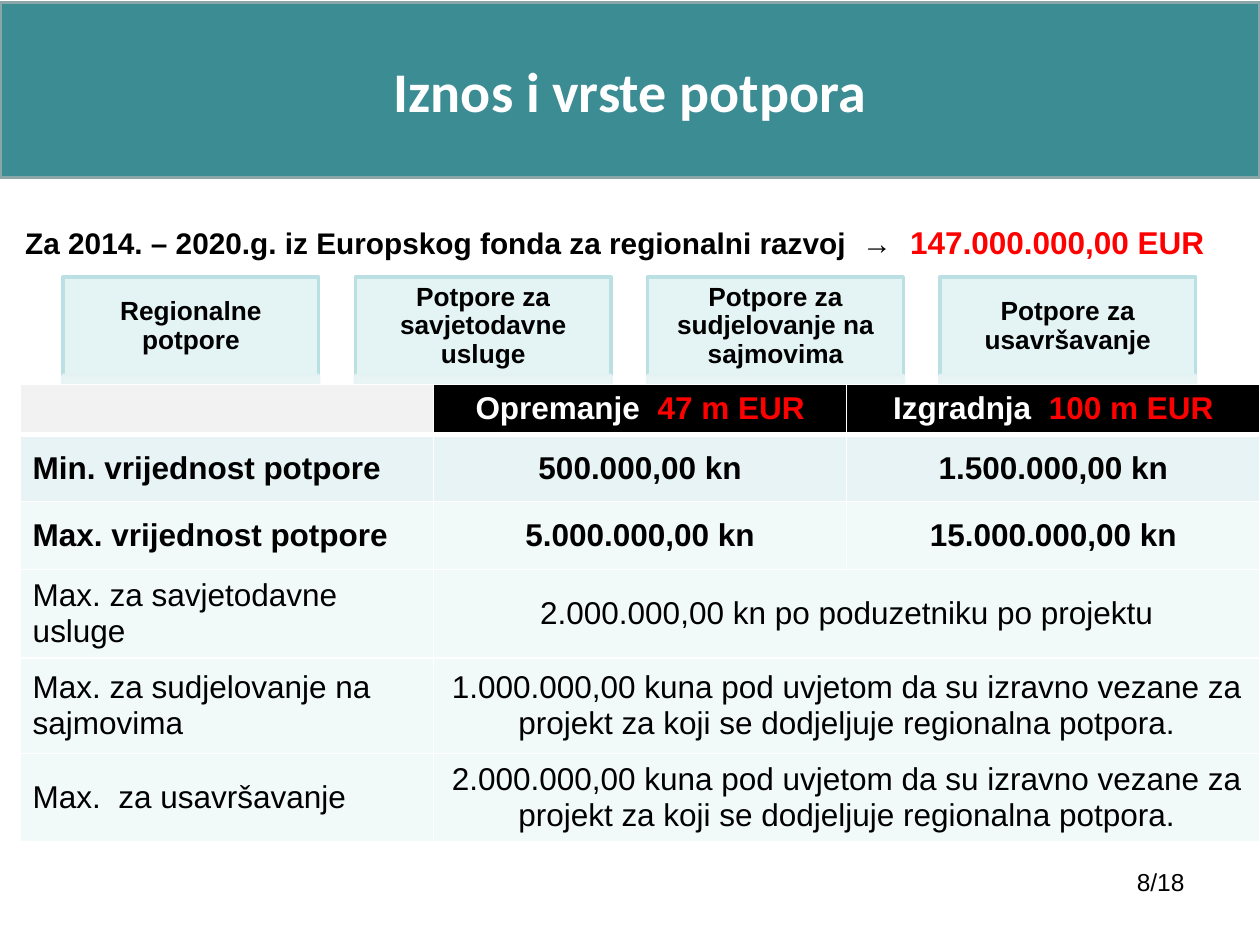
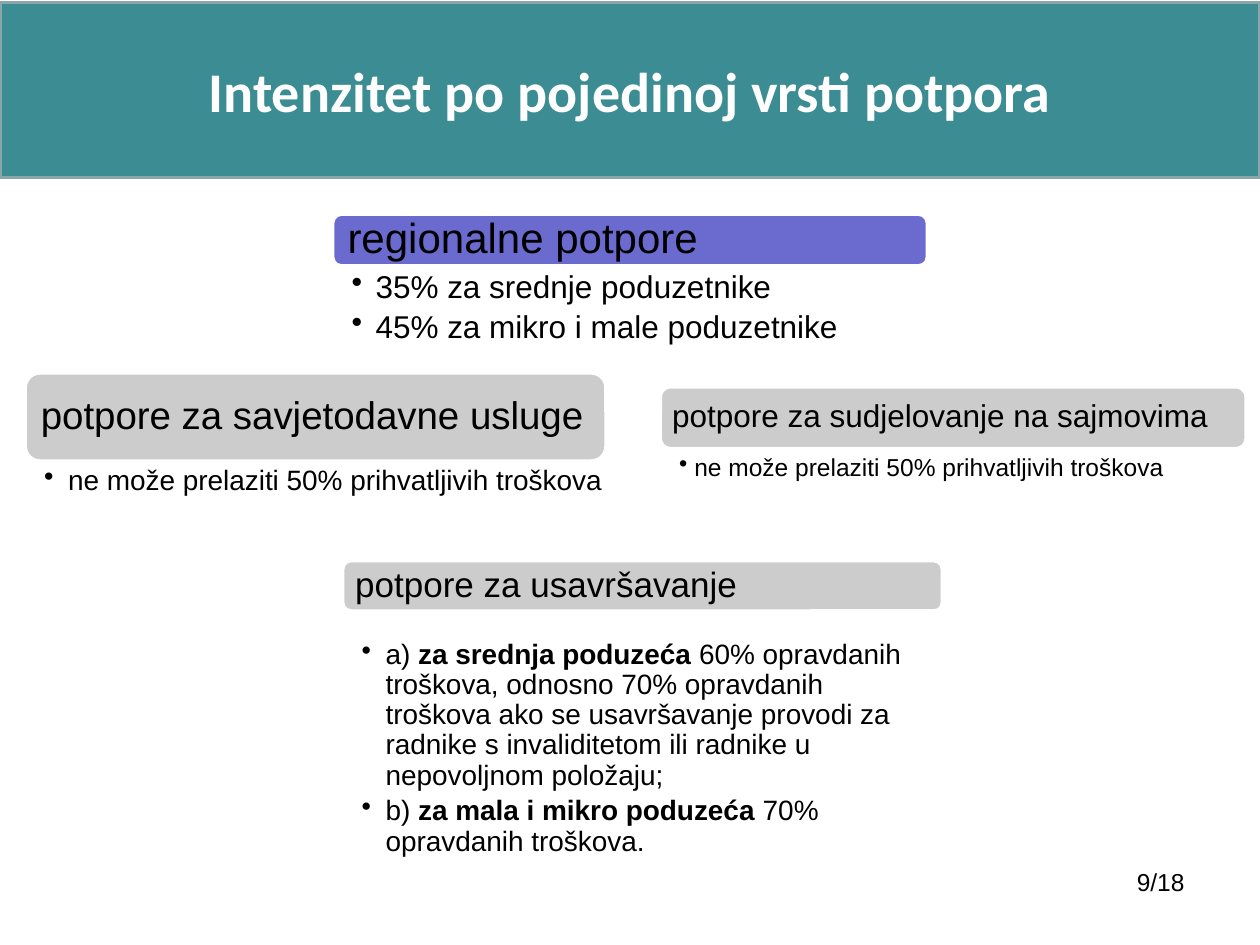
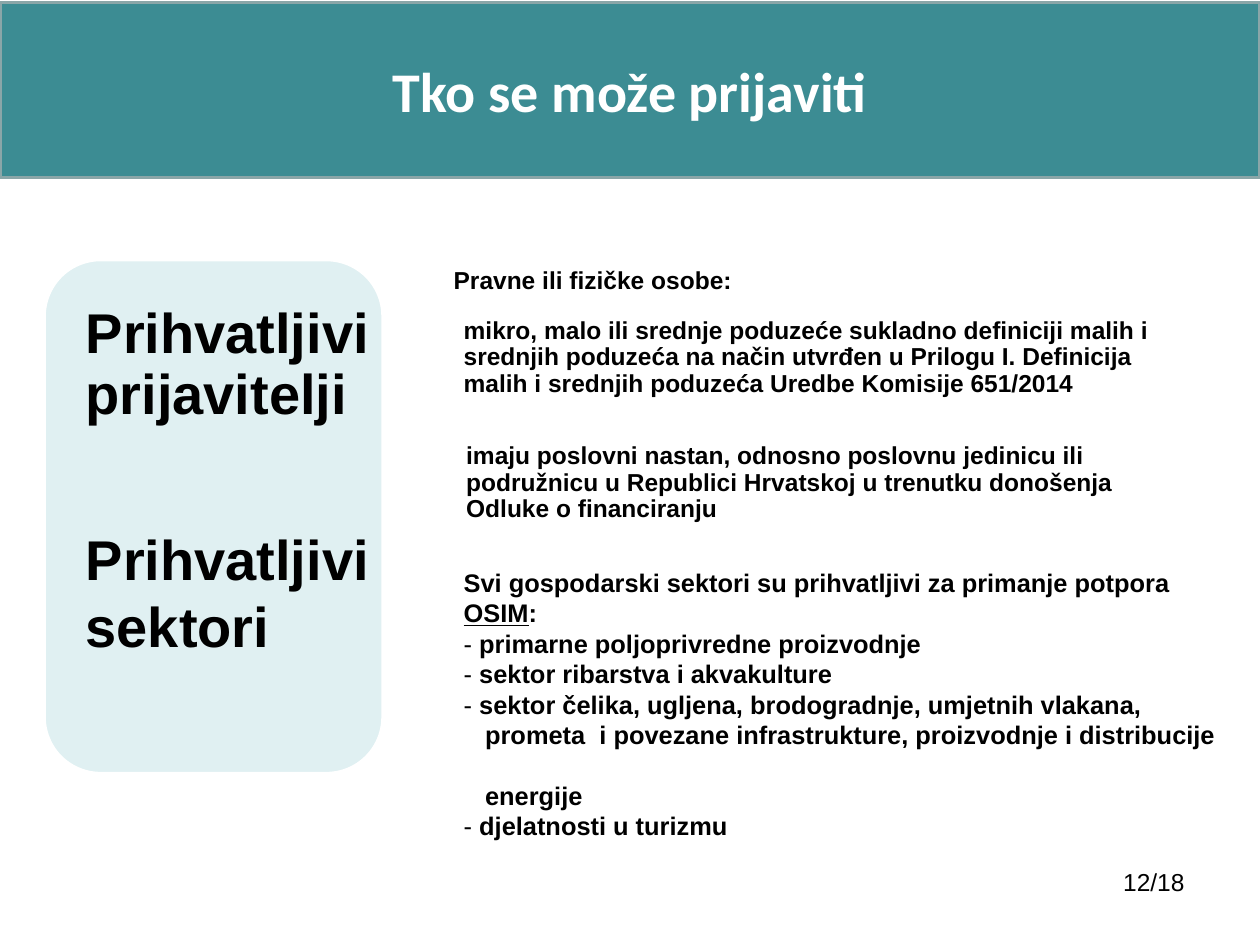
import pptx
import pptx.util
import pptx.dml.color
import pptx.enum.shapes
import pptx.enum.text
import pptx.oxml
import pptx.oxml.ns
import lxml.etree

Inches = pptx.util.Inches
Pt = pptx.util.Pt
SHAPES = pptx.enum.shapes.MSO_SHAPE
ALIGN = pptx.enum.text.PP_ALIGN
ANCHOR = pptx.enum.text.MSO_ANCHOR
qn = pptx.oxml.ns.qn

# Shared look
TEAL, TEAL_EDGE = "3C8C93", "8AA6A8"
ICE, ICE_EDGE, MIST, FROST, PANEL = "E4F3F4", "BBE0E3", "E7F3F4", "F1F9F9", "E0F0F2"
VIOLET, GREY, PALE_GREY = "6B6BCF", "CCCCCC", "F2F2F2"
BLACK, WHITE, RED = "000000", "FFFFFF", "FF0000"
BODY_FONT, TITLE_FONT = "Arial", "Calibri"


def color(value):
    return pptx.dml.color.RGBColor.from_string(value)


def bold(text):
    return text, {"bold": True}


def red(text, **extra):
    return text, {"color": RED, **extra}


def style_font(font, settings):
    for name, value in settings.items():
        if name == "color":
            font.color.rgb = color(value)
        elif name == "size":
            font.size = Pt(value)
        else:
            setattr(font, name, value)


def write(frame, paragraphs, size, font=BODY_FONT, ink=BLACK, is_bold=None, align=ALIGN.LEFT,
          spacing=None, after=0, bullet_indent=None):
    """Fill a text frame; a paragraph is a string or a list of strings and (text, settings)."""
    for index, content in enumerate(paragraphs):
        paragraph = frame.paragraphs[0] if index == 0 else frame.add_paragraph()
        paragraph.alignment = align
        if spacing:
            paragraph.line_spacing = spacing
        if after:
            paragraph.space_after = Pt(after)
        if bullet_indent:
            properties = paragraph._p.get_or_add_pPr()
            properties.set("marL", str(Inches(bullet_indent)))
            properties.set("indent", str(-Inches(bullet_indent)))
            lxml.etree.SubElement(properties, qn("a:buChar")).set("char", "•")
        style_font(paragraph.font, {"name": font, "size": size, "bold": is_bold, "color": ink})
        for part in [content] if isinstance(content, str) else content:
            text, settings = (part, {}) if isinstance(part, str) else part
            run = paragraph.add_run()
            run.text = text
            style_font(run.font, settings)


def set_frame(frame, anchor, insets):
    frame.word_wrap = True
    frame.vertical_anchor = anchor
    horizontal, vertical = insets
    frame.margin_left = frame.margin_right = Inches(horizontal)
    frame.margin_top = frame.margin_bottom = Inches(vertical)


def add_box(slide, kind, box, fill, edge, insets=(0.1, 0.05)):
    shape = slide.shapes.add_shape(kind, *map(Inches, box))
    shape.shadow.inherit = False
    shape.fill.solid()
    shape.fill.fore_color.rgb = color(fill)
    shape.line.color.rgb = color(edge)
    shape.line.width = Pt(2)
    set_frame(shape.text_frame, ANCHOR.MIDDLE, insets)
    return shape


def add_text(slide, box, paragraphs, size, anchor=ANCHOR.MIDDLE, insets=(0.02, 0.01), **look):
    frame = slide.shapes.add_textbox(*map(Inches, box)).text_frame
    set_frame(frame, anchor, insets)
    write(frame, paragraphs, size, **look)
    return frame


def new_slide(presentation, title, page):
    """Blank slide with the title band and the page number."""
    slide = presentation.slides.add_slide(presentation.slide_layouts[6])
    band = add_box(slide, SHAPES.RECTANGLE, (0, 0.02, 10, 1.39), TEAL, TEAL_EDGE)
    write(band.text_frame, [title], 32, TITLE_FONT, WHITE, True, ALIGN.CENTER)
    add_text(slide, (7.17, 6.83, 2.33, 0.52), [page], 14, ANCHOR.TOP, (0.1, 0.05),
             align=ALIGN.RIGHT)
    return slide


# Slide 8: amounts and kinds of support
def add_kind_cards(slide, box, labels):
    left, top, width, height = box
    card_width = 2.03
    step = (width - card_width) / (len(labels) - 1)
    for index, label in enumerate(labels):
        x = left + index * step
        card = add_box(slide, SHAPES.RECTANGLE, (x, top, card_width, height), ICE, ICE_EDGE,
                       (0.12, 0.07))
        write(card.text_frame, [label], 15, is_bold=True, align=ALIGN.CENTER, spacing=0.9)
        foot = add_box(slide, SHAPES.RECTANGLE, (x, top + height, card_width, 0.72), MIST, MIST)
        for tone in foot._element.spPr.iter(qn("a:srgbClr")):
            lxml.etree.SubElement(tone, qn("a:alpha")).set("val", "90000")


def set_borders(cell, top, bottom):
    properties = cell._tc.get_or_add_tcPr()
    for side, width in (("L", 1), ("R", 1), ("T", top), ("B", bottom)):
        line = lxml.etree.SubElement(properties, qn("a:ln" + side), w=str(Pt(width)))
        fill = lxml.etree.SubElement(line, qn("a:solidFill"))
        lxml.etree.SubElement(fill, qn("a:srgbClr")).set("val", WHITE)


def add_amount_table(slide, box, heights, rows):
    graphic = slide.shapes.add_table(len(rows), 3, *map(Inches, box))
    table = graphic.table
    table.first_row = table.horz_banding = False
    for column in table.columns:
        column.width = Inches(box[2] / 3)
    for row_index, values in enumerate(rows):
        table.rows[row_index].height = Inches(heights[row_index])
        header = row_index == 0
        for column_index in range(3):
            cell = table.cell(row_index, column_index)
            set_borders(cell, 3 if row_index == 1 else 1, 3 if header else 1)
            cell.fill.solid()
            if header:
                fill = BLACK if column_index else PALE_GREY
            else:
                fill = MIST if row_index == 1 else FROST
            cell.fill.fore_color.rgb = color(fill)
            cell.vertical_anchor = ANCHOR.TOP if header else ANCHOR.MIDDLE
            if column_index < len(values) and values[column_index]:
                write(cell.text_frame, [values[column_index]], 18,
                      ink=WHITE if header else BLACK, is_bold=row_index < 3,
                      align=ALIGN.CENTER if column_index else ALIGN.LEFT)
        if len(values) == 2:
            table.cell(row_index, 1).merge(table.cell(row_index, 2))


def build_amounts(presentation):
    slide = new_slide(presentation, "Iznos i vrste potpora", "8/18")
    add_kind_cards(slide, (0.5, 2.2, 8.99, 0.78), [
        "Regionalne potpore", "Potpore za savjetodavne usluge",
        "Potpore za sudjelovanje na sajmovima", "Potpore za usavršavanje"])
    add_text(slide, (0.2, 1.73, 9.7, 0.38),
             [["Za 2014. – 2020.g. iz Europskog fonda za regionalni razvoj  →  ",
               red("147.000.000,00 EUR", size=18)]], 17, insets=(0, 0), is_bold=True)
    condition = ("kuna pod uvjetom da su izravno vezane za projekt "
                 "za koji se dodjeljuje regionalna potpora.")
    add_amount_table(slide, (0.16, 3.05, 9.84, 3.55), [0.38, 0.53, 0.54, 0.67, 0.76, 0.67], [
        ["", ["Opremanje  ", red("47 m EUR")], ["Izgradnja  ", red("100 m EUR")]],
        ["Min. vrijednost potpore", "500.000,00 kn", "1.500.000,00 kn"],
        ["Max. vrijednost potpore", "5.000.000,00 kn", "15.000.000,00 kn"],
        ["Max. za savjetodavne usluge", "2.000.000,00 kn po poduzetniku po projektu"],
        ["Max. za sudjelovanje na sajmovima", f"1.000.000,00 {condition}"],
        ["Max.  za usavršavanje", f"2.000.000,00 {condition}"]])


# Slide 9: support intensity
def add_support(slide, box, fill, heading, heading_size, inset, bullets, size,
                body, indent=0.19):
    """Rounded heading with bullets below; body is (gap, width, height)."""
    left, top, width, height = box
    bar = add_box(slide, SHAPES.ROUNDED_RECTANGLE, box, fill, WHITE, (inset, 0))
    write(bar.text_frame, [heading], heading_size, spacing=0.9)
    gap, body_width, body_height = body
    add_text(slide, (left, top + height + gap, body_width, body_height), bullets, size,
             ANCHOR.TOP, (0.15, 0.03), spacing=0.9, after=size * 0.2, bullet_indent=indent)


def build_intensity(presentation):
    slide = new_slide(presentation, "Intenzitet po pojedinoj vrsti potpora", "9/18")
    limit = ["ne može prelaziti 50% prihvatljivih troškova"]
    add_support(slide, (2.64, 1.7, 4.72, 0.41), VIOLET, "regionalne potpore", 24, 0.1,
                ["35% za srednje poduzetnike", "45% za mikro i male poduzetnike"], 18,
                (0.01, 4.72, 1))
    add_support(slide, (0.2, 2.96, 4.61, 0.7), GREY, "potpore za savjetodavne usluge", 22, 0.09,
                limit, 16, (0.01, 5, 0.71))
    add_support(slide, (5.24, 3.07, 4.65, 0.49), GREY, "potpore za sudjelovanje na sajmovima",
                18, 0.07, limit, 14, (0.02, 4.65, 0.92), 0.12)
    add_support(slide, (2.72, 4.45, 4.76, 0.4), GREY, "potpore za usavršavanje", 20, 0.08, [
        ["a) ", bold("za srednja poduzeća "),
         "60% opravdanih troškova, odnosno 70% opravdanih troškova ako se usavršavanje "
         "provodi za radnike s invaliditetom ili radnike u nepovoljnom položaju;"],
        ["b) ", bold("za mala i mikro poduzeća "), "70% opravdanih troškova."]], 16,
        (0.2, 4.76, 1.74))


# Slide 12: who can apply
def add_topic_panel(slide, box):
    left, top, width, height = box
    add_box(slide, SHAPES.ROUNDED_RECTANGLE, box, PANEL, WHITE)
    frame = add_text(slide, (left + 0.24, top - 0.17, 3.45, 3.43),
                     ["Prihvatljivi prijavitelji", "Prihvatljivi", "sektori"], 32,
                     ANCHOR.BOTTOM, (0.09, 0.09), is_bold=True)
    frame.paragraphs[0].line_spacing = 0.9
    frame.paragraphs[1].space_before = Pt(56)


def add_sectors(slide, box):
    dash = ("- ", {"bold": False})
    frame = add_text(slide, box, [
        ["Svi gospodarski sektori su prihvatljivi za primanje potpora ",
         ("OSIM", {"underline": True}), ":"],
        [dash, "primarne poljoprivredne proizvodnje"],
        [dash, "sektor ribarstva i akvakulture"],
        [dash, "sektor čelika, ugljena, brodogradnje, umjetnih vlakana,"],
        "prometa  i povezane infrastrukture, proizvodnje i distribucije",
        "energije",
        [dash, "djelatnosti u turizmu"]], 14.5, ANCHOR.TOP, is_bold=True)
    for paragraph in frame.paragraphs[4:6]:
        paragraph._p.get_or_add_pPr().set("marL", str(Inches(0.17)))
    frame.paragraphs[5].space_before = Pt(17.4)


def build_applicants(presentation):
    slide = new_slide(presentation, "Tko se može prijaviti", "12/18")
    add_topic_panel(slide, (0.35, 2.06, 2.69, 4.08))
    statements = [
        ((3.55, 1.95, 4.09, 0.57), 0.05, "Pravne ili fizičke osobe:"),
        ((3.66, 2.27, 5.58, 1.14), 0.02,
         "mikro, malo ili srednje poduzeće sukladno definiciji malih i srednjih poduzeća na "
         "način utvrđen u Prilogu I. Definicija malih i srednjih poduzeća Uredbe Komisije "
         "651/2014"),
        ((3.68, 3.33, 5.56, 1.01), 0.02,
         "imaju poslovni nastan, odnosno poslovnu jedinicu ili podružnicu u Republici "
         "Hrvatskoj u trenutku donošenja Odluke o financiranju")]
    for box, inset, text in statements:
        add_text(slide, box, [text], 14, insets=(inset, 0.01), is_bold=True, spacing=0.9)
    add_sectors(slide, (3.66, 4.49, 6.11, 2.17))


def main():
    presentation = pptx.Presentation()
    presentation.slide_width = Inches(10)
    presentation.slide_height = Inches(7.5)
    build_amounts(presentation)
    build_intensity(presentation)
    build_applicants(presentation)
    presentation.save("out.pptx")


if __name__ == "__main__":
    main()
